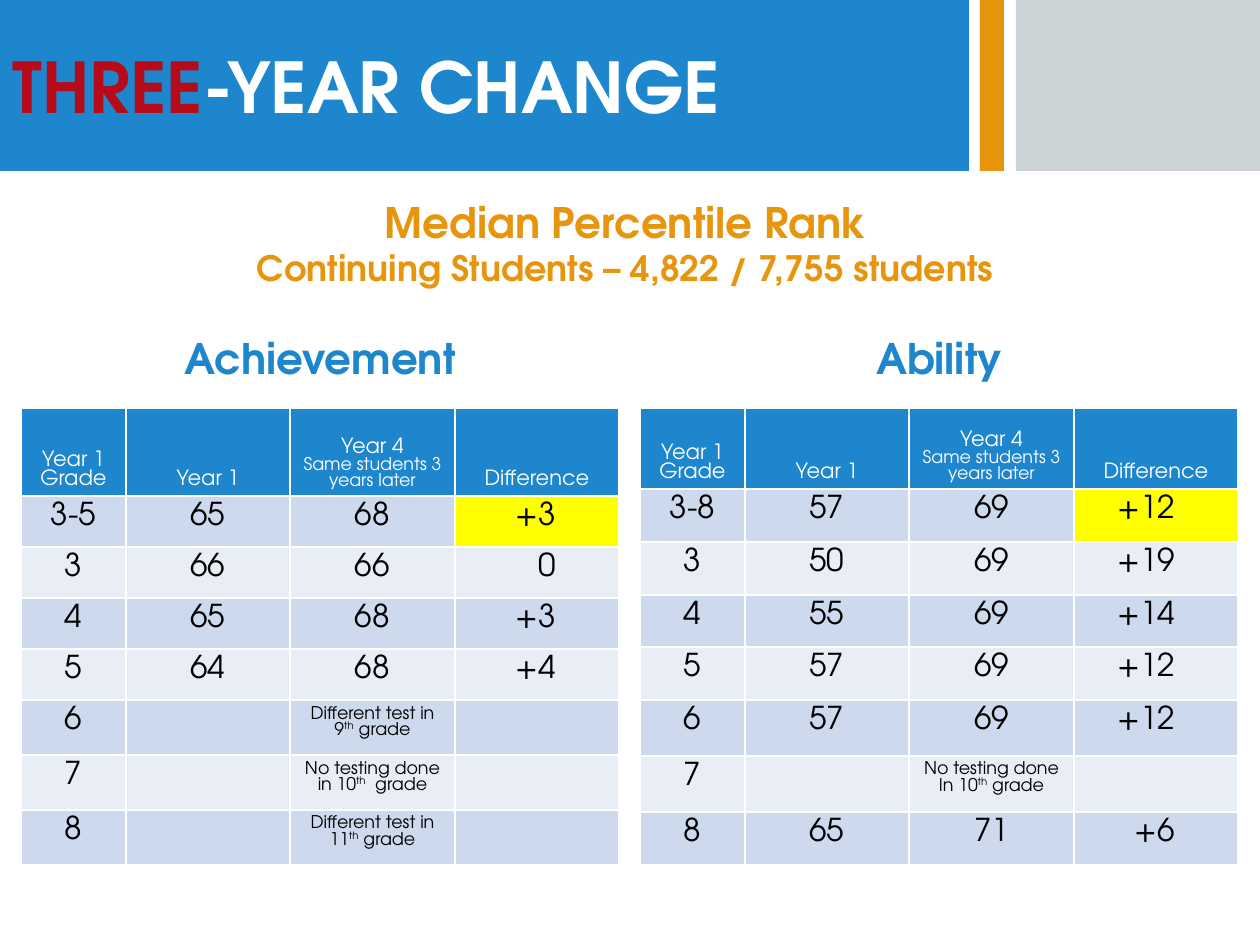
from dataclasses import dataclass

import pptx
import pptx.dml.color
import pptx.enum.shapes
import pptx.enum.text
import pptx.util
from pptx.oxml import parse_xml
from pptx.oxml.ns import nsdecls

EMU_PER_PX = 914400 / 126
FONT = "TeX Gyre Adventor"
COLORS = {
    "blue": "1D86CD", "orange": "E8950E", "gray": "CDD4D7", "red": "B50B1B",
    "white": "FFFFFF", "black": "000000", "yellow": "FFFF00",
    "band_dark": "CDD9ED", "band_light": "E8EDF6",
}
ALIGN = pptx.enum.text.PP_ALIGN
ANCHOR = pptx.enum.text.MSO_ANCHOR


@dataclass(frozen=True)
class Run:
    text: str
    size: int
    color: str
    bold: bool = False
    raised: bool = False
    break_after: bool = False


@dataclass(frozen=True)
class Box:
    left: int
    top: int
    width: int
    height: int


@dataclass(frozen=True)
class ScoreTable:
    heading: str
    left: int
    row_heights: list[int]
    grade_header: str
    rows: list[tuple[str, str, str, str]]


def px(length: int) -> int:
    return round(length * EMU_PER_PX)


def rgb(name: str) -> pptx.dml.color.RGBColor:
    return pptx.dml.color.RGBColor.from_string(COLORS[name])


def set_attributes(target: object, values: dict) -> None:
    for name, value in values.items():
        setattr(target, name, value)


def write_paragraph(paragraph, runs: list[Run], **values) -> None:
    set_attributes(paragraph, values)
    for item in runs:
        run = paragraph.add_run()
        run.text = item.text
        set_attributes(run.font, {"name": FONT, "size": pptx.util.Pt(item.size),
                                  "bold": item.bold})
        run.font.color.rgb = rgb(item.color)
        if item.raised:
            run.font._element.set("baseline", "30000")
        if item.break_after:
            paragraph.add_line_break()


def add_rectangle(slide, box: Box, color: str):
    shape = slide.shapes.add_shape(
        pptx.enum.shapes.MSO_SHAPE.RECTANGLE,
        px(box.left), px(box.top), px(box.width), px(box.height))
    shape.shadow.inherit = False
    shape.fill.solid()
    shape.fill.fore_color.rgb = rgb(color)
    shape.line.fill.background()
    return shape


def add_text(slide, box: Box, runs: list[Run]) -> None:
    shape = slide.shapes.add_textbox(
        px(box.left), px(box.top), px(box.width), px(box.height))
    shape.text_frame.word_wrap = True
    write_paragraph(shape.text_frame.paragraphs[0], runs, alignment=ALIGN.CENTER)


def set_borders(cell) -> None:
    properties = cell._tc.get_or_add_tcPr()
    for side in "LRTB":
        properties.append(parse_xml(
            f'<a:ln{side} {nsdecls("a")} w="12700"><a:solidFill>'
            f'<a:srgbClr val="{COLORS["white"]}"/></a:solidFill></a:ln{side}>'))


def fill_cell(cell, text: str, sizes: list[int], color: str, fill: str,
              alignment=ALIGN.CENTER) -> None:
    """Each line is a paragraph; text between carets is raised."""
    set_borders(cell)
    cell.fill.solid()
    cell.fill.fore_color.rgb = rgb(fill)
    frame = cell.text_frame
    for index, line in enumerate(text.split("\n")):
        paragraph = frame.add_paragraph() if index else frame.paragraphs[0]
        size = sizes[min(index, len(sizes) - 1)]
        runs = [Run(part, size, color, raised=position % 2 == 1)
                for position, part in enumerate(line.split("^")) if part]
        write_paragraph(paragraph, runs, alignment=alignment)


def add_score_table(slide, data: ScoreTable) -> None:
    add_text(slide, Box(data.left, 326, 598, 64),
             [Run(data.heading, 24, "blue", bold=True)])
    frame = slide.shapes.add_table(
        len(data.row_heights), len(COLUMN_WIDTHS), px(data.left), px(408),
        px(sum(COLUMN_WIDTHS)), px(sum(data.row_heights)))
    table = frame.table
    for column, width in zip(table.columns, COLUMN_WIDTHS):
        column.width = px(width)
    for row, height in zip(table.rows, data.row_heights):
        row.height = px(height)

    # Header row
    headers = [data.grade_header, "Year 1",
               "Year 4\nSame students 3 years later", "Difference"]
    for column, text in enumerate(headers):
        cell = table.cell(0, column)
        fill_cell(cell, text, [12, 10], "white", "blue")
        cell.vertical_anchor = ANCHOR.BOTTOM
    if "\n" in data.grade_header:
        for run in table.cell(0, 0).text_frame.paragraphs[1].runs:
            run.font.size = pptx.util.Pt(12)

    # Banded score rows, with the overall difference highlighted
    for row, values in enumerate(data.rows, start=1):
        band = "band_dark" if row % 2 else "band_light"
        for column, text in enumerate(values):
            cell = table.cell(row, column)
            is_difference = column == 3 and text != ""
            fill_cell(cell, text, [10 if "^" in text else 18], "black",
                      "yellow" if is_difference and row == 1 else band,
                      ALIGN.RIGHT if is_difference else ALIGN.CENTER)
            if is_difference:
                cell.margin_right = px(63)


COLUMN_WIDTHS = [105, 164, 165, 164]
TABLES = [
    ScoreTable("Achievement", 21, [88, 51, 51, 51, 51, 55, 55, 54], "Year 1 Grade", [
        ("3-5", "65", "68", "+3"),
        ("3", "66", "66", "0"),
        ("4", "65", "68", "+3"),
        ("5", "64", "68", "+4"),
        ("6", "", "Different test in 9^th^ grade", ""),
        ("7", "", "No testing done in 10^th^  grade", ""),
        ("8", "", "Different test in 11^th^ grade", ""),
    ]),
    ScoreTable("Ability", 640, [81, 53, 53, 52, 53, 56, 56, 53], "Year 1\nGrade", [
        ("3-8", "57", "69", "+12"),
        ("3", "50", "69", "+19"),
        ("4", "55", "69", "+14"),
        ("5", "57", "69", "+12"),
        ("6", "57", "69", "+12"),
        ("7", "", "No testing done\nIn 10^th^ grade", ""),
        ("8", "65", "71", "+6"),
    ]),
]


def main() -> None:
    presentation = pptx.Presentation()
    set_attributes(presentation, {"slide_width": px(1260), "slide_height": px(945)})
    slide = presentation.slides.add_slide(presentation.slide_layouts[6])

    # Banner
    add_rectangle(slide, Box(1016, 0, 244, 171), "gray")
    add_rectangle(slide, Box(980, 0, 24, 171), "orange")
    banner = add_rectangle(slide, Box(0, 0, 969, 171), "blue")
    set_attributes(banner.text_frame, {
        "word_wrap": True, "vertical_anchor": ANCHOR.MIDDLE,
        "margin_left": px(13), "margin_right": px(13),
        "margin_top": 0, "margin_bottom": 0})
    write_paragraph(banner.text_frame.paragraphs[0],
                    [Run("THREE", 40, "red", bold=True),
                     Run("-YEAR CHANGE", 40, "white", bold=True)],
                    alignment=ALIGN.LEFT)

    # Subtitle
    add_text(slide, Box(51, 190, 1149, 117), [
        Run("Median Percentile Rank", 24, "orange", bold=True, break_after=True),
        Run("Continuing Students – 4,822 / 7,755 students", 20, "orange", bold=True)])

    # Score tables
    for data in TABLES:
        add_score_table(slide, data)

    presentation.save("out.pptx")


if __name__ == "__main__":
    main()
